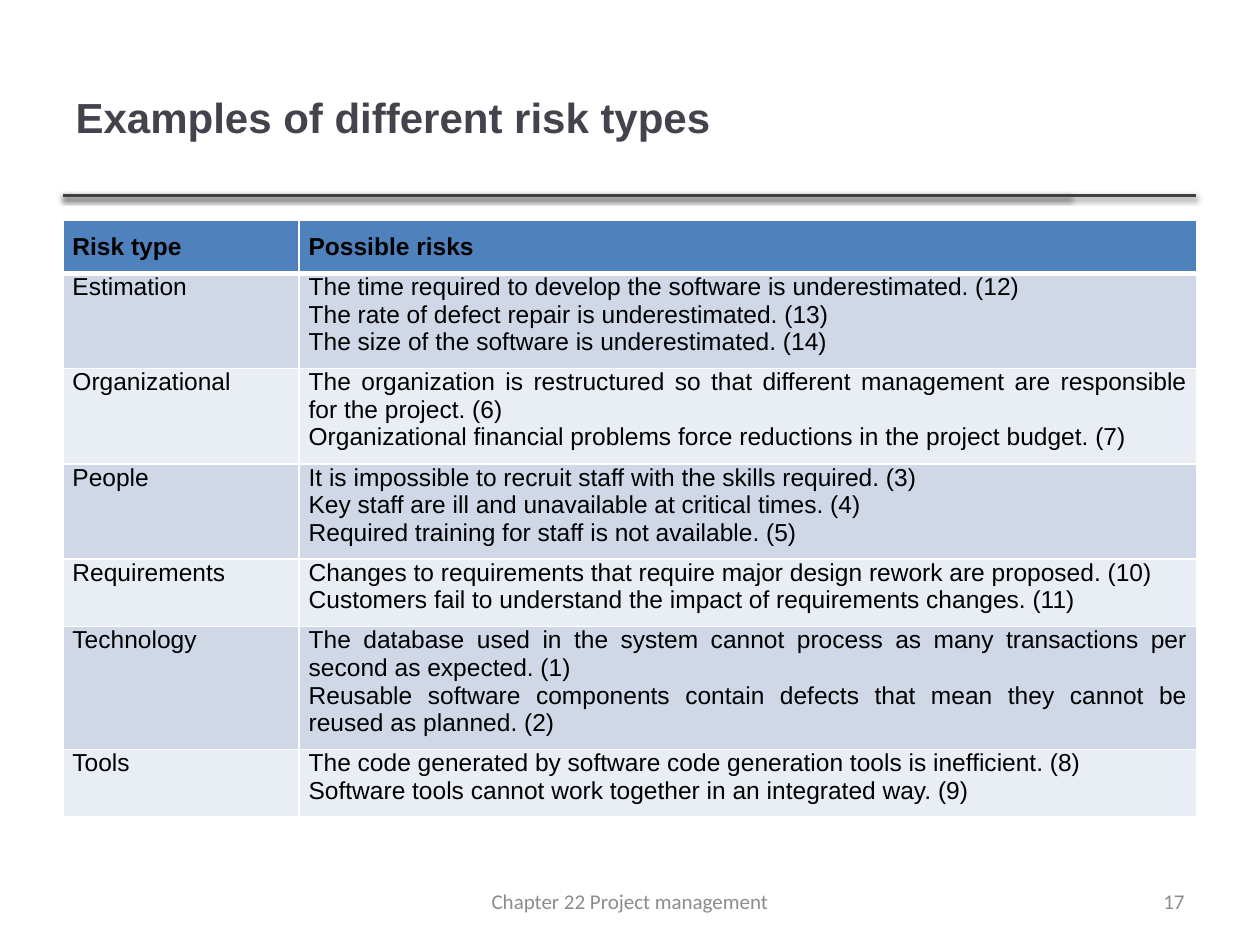
import dataclasses

import pptx
import pptx.dml.color
import pptx.enum.shapes
import pptx.enum.text
import pptx.oxml
import pptx.oxml.ns
import pptx.util

Pt = pptx.util.Pt
RGB = pptx.dml.color.RGBColor.from_string
ALIGN = pptx.enum.text.PP_ALIGN
MIDDLE = pptx.enum.text.MSO_ANCHOR.MIDDLE
NS = pptx.oxml.ns.nsdecls("a")


@dataclasses.dataclass(frozen=True)
class Theme:
    font: str = "Arial"
    footer_font: str = "Calibri"
    title_size: int = 24
    table_size: int = 14
    footer_size: int = 12
    title: str = "46424D"
    text: str = "000000"
    footer: str = "8C8C8C"
    rule: str = "404040"
    border: str = "FFFFFF"
    header: str = "4F81BD"
    bands: tuple[str, str] = ("D0D8E8", "E9EDF4")


@dataclasses.dataclass(frozen=True)
class RiskType:
    name: str
    risks: tuple[str, ...]


@dataclasses.dataclass(frozen=True)
class Footer:
    text: str
    left: float
    width: float
    align: ALIGN


THEME = Theme()
LEFT = 36
ROW_HEIGHT = 29.5
COLUMN_WIDTHS = (135, 513)
RULE_Y = 111.6
RULE_ENDS = (611.5, 683.5)

RISK_TYPES = (
    RiskType("Estimation", (
        "The time required to develop the software is underestimated. (12)",
        "The rate of defect repair is underestimated. (13)",
        "The size of the software is underestimated. (14)")),
    RiskType("Organizational", (
        "The organization is restructured so that different management are "
        "responsible for the project. (6)",
        "Organizational financial problems force reductions in the project budget. (7)")),
    RiskType("People", (
        "It is impossible to recruit staff with the skills required. (3)",
        "Key staff are ill and unavailable at critical times. (4)",
        "Required training for staff is not available. (5)")),
    RiskType("Requirements", (
        "Changes to requirements that require major design rework are proposed. (10)",
        "Customers fail to understand the impact of requirements changes. (11)")),
    RiskType("Technology", (
        "The database used in the system cannot process as many transactions "
        "per second as expected. (1)",
        "Reusable software components contain defects that mean they cannot "
        "be reused as planned. (2)")),
    RiskType("Tools", (
        "The code generated by software code generation tools is inefficient. (8)",
        "Software tools cannot work together in an integrated way. (9)")),
)

FOOTERS = (
    Footer("Chapter 22 Project management", 246, 228, ALIGN.CENTER),
    Footer("17", 516, 168, ALIGN.RIGHT),
)


def style(p, font: str, size: float, color: str, bold: bool, align: ALIGN) -> None:
    p.alignment = align
    p.font.name = font
    p.font.size = Pt(size)
    p.font.bold = bold
    p.font.color.rgb = RGB(color)


def add_rule(s, end: float) -> None:
    line = s.shapes.add_connector(
        pptx.enum.shapes.MSO_CONNECTOR.STRAIGHT,
        Pt(LEFT), Pt(RULE_Y), Pt(end), Pt(RULE_Y))
    line.line.color.rgb = RGB(THEME.rule)
    line.line.width = Pt(2)
    line._element.spPr.append(pptx.oxml.parse_xml(
        f'<a:effectLst {NS}><a:outerShdw blurRad="{Pt(3.1)}" dist="{Pt(1.6)}" '
        'dir="5400000" rotWithShape="0"><a:srgbClr val="000000">'
        '<a:alpha val="38000"/></a:srgbClr></a:outerShdw></a:effectLst>'))


def set_borders(cell, top: float, bottom: float) -> None:
    tc_pr = cell._tc.get_or_add_tcPr()
    for side, width in (("L", 1), ("R", 1), ("T", top), ("B", bottom)):
        tc_pr.append(pptx.oxml.parse_xml(
            f'<a:ln{side} {NS} w="{Pt(width)}"><a:solidFill>'
            f'<a:srgbClr val="{THEME.border}"/></a:solidFill></a:ln{side}>'))


def fill_cell(cell, lines: tuple[str, ...], row: int) -> None:
    header = row == 0
    set_borders(cell, 3 if row == 1 else 1, 3 if header else 1)
    cell.fill.solid()
    cell.fill.fore_color.rgb = RGB(THEME.header if header else THEME.bands[(row - 1) % 2])
    cell.margin_left = cell.margin_right = Pt(5.4)
    cell.margin_top = Pt(7.2 if header else 0)
    cell.margin_bottom = Pt(7.2)
    tf = cell.text_frame
    tf.text = "\n".join(lines)
    for p in tf.paragraphs:
        style(p, THEME.font, THEME.table_size, THEME.text, header, ALIGN.JUSTIFY)


def add_risk_table(s, risk_types: tuple[RiskType, ...]) -> None:
    rows = (RiskType("Risk type", ("Possible risks",)),) + risk_types
    table = s.shapes.add_table(
        len(rows), len(COLUMN_WIDTHS), Pt(LEFT), Pt(126),
        Pt(sum(COLUMN_WIDTHS)), Pt(ROW_HEIGHT * len(rows))).table
    for column, width in zip(table.columns, COLUMN_WIDTHS):
        column.width = Pt(width)
    for i, item in enumerate(rows):
        fill_cell(table.cell(i, 0), (item.name,), i)
        fill_cell(table.cell(i, 1), item.risks, i)


def add_footer(s, footer: Footer) -> None:
    sp = s.shapes.add_textbox(Pt(footer.left), Pt(500.5), Pt(footer.width), Pt(28.75))
    tf = sp.text_frame
    tf.word_wrap = True
    tf.vertical_anchor = MIDDLE
    tf.text = footer.text
    style(tf.paragraphs[0], THEME.footer_font, THEME.footer_size,
          THEME.footer, False, footer.align)


def main() -> None:
    prs = pptx.Presentation()
    prs.slide_width, prs.slide_height = Pt(720), Pt(540)
    s = prs.slides.add_slide(prs.slide_layouts[5])

    # Rules under the title
    for end in RULE_ENDS:
        add_rule(s, end)

    # Title
    sp = s.shapes.title
    sp.left, sp.top, sp.width, sp.height = Pt(LEFT), Pt(21.6), Pt(575), Pt(90)
    tf = sp.text_frame
    tf.vertical_anchor = MIDDLE
    tf.text = "Examples of different risk types"
    style(tf.paragraphs[0], THEME.font, THEME.title_size, THEME.title, True, ALIGN.LEFT)

    # Table and footer
    add_risk_table(s, RISK_TYPES)
    for footer in FOOTERS:
        add_footer(s, footer)

    prs.save("out.pptx")


if __name__ == "__main__":
    main()
